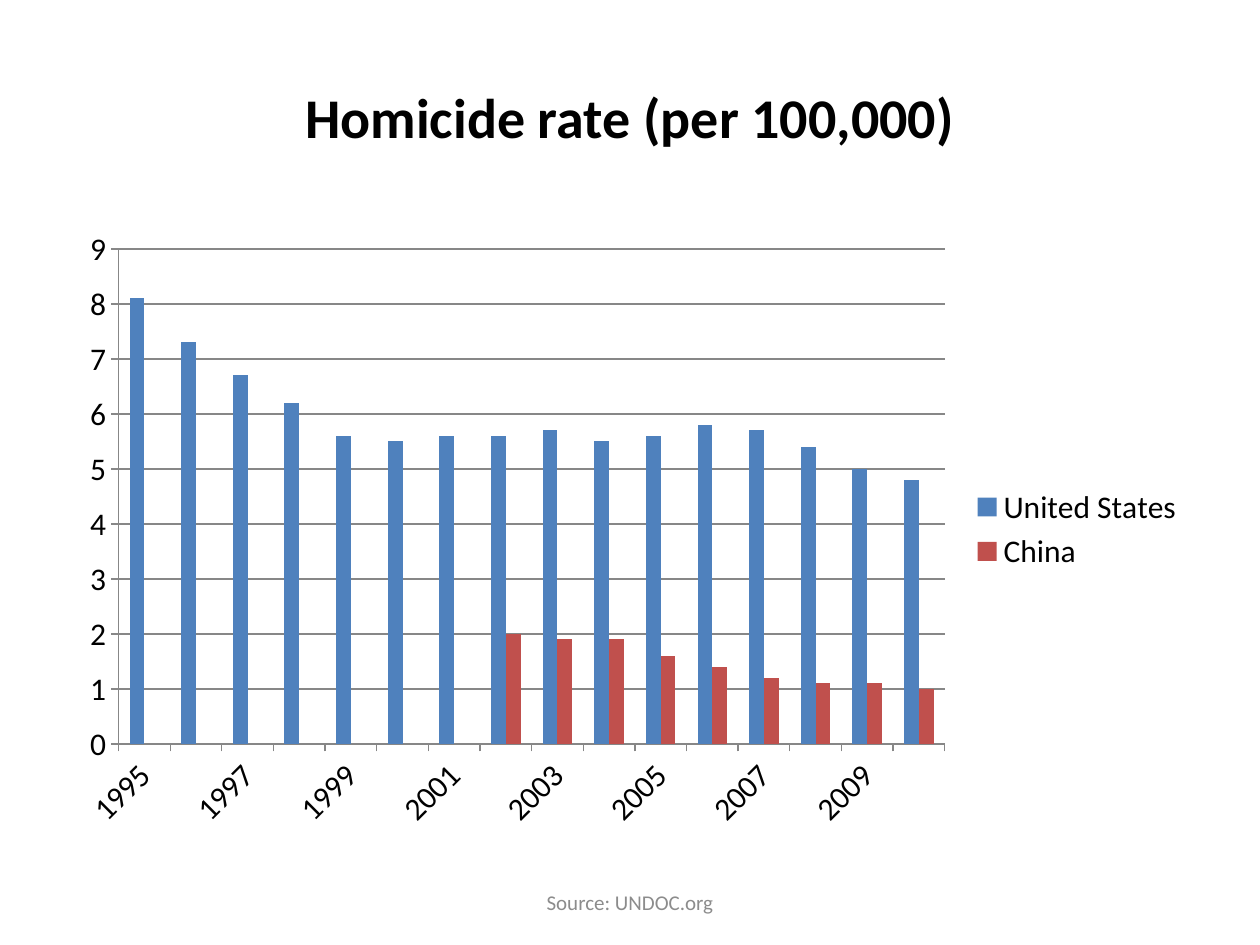
from dataclasses import dataclass

import pptx
import pptx.chart.data
import pptx.dml.color
import pptx.enum.chart
import pptx.enum.text
import pptx.util

WIDTH, HEIGHT = 10, 7.5
FONT = "Calibri"
AXIS_GREY = "878787"


@dataclass
class Box:
    """Position and size as shares of the slide's width and height."""
    left: float
    top: float
    width: float
    height: float

    def emu(self) -> list[int]:
        lengths = (self.left * WIDTH, self.top * HEIGHT,
                   self.width * WIDTH, self.height * HEIGHT)
        return [pptx.util.Inches(v) for v in lengths]


@dataclass
class Label:
    text: str
    box: Box
    size: int
    color: str
    bold: bool = False


@dataclass
class Series:
    name: str
    color: str
    values: list[float | None]


LABELS = [
    Label("Homicide rate (per 100,000)", Box(0.05, 0.04, 0.9, 1 / 6), 32, "000000", True),
    Label("Source: UNDOC.org", Box(0.34, 0.93, 0.32, 0.05), 12, "8C8C8C"),
]
CHART_BOX = Box(0.05, 0.23, 0.9, 0.66)
YEARS = [str(year) for year in range(1995, 2011)]
SERIES = [
    Series("United States", "4F81BD",
           [8.1, 7.3, 6.7, 6.2, 5.6, 5.5, 5.6, 5.6,
            5.7, 5.5, 5.6, 5.8, 5.7, 5.4, 5, 4.8]),
    Series("China", "C0504D",
           [None] * 7 + [2, 1.9, 1.9, 1.6, 1.4, 1.2, 1.1, 1.1, 1]),
]


def rgb(color: str) -> pptx.dml.color.RGBColor:
    return pptx.dml.color.RGBColor.from_string(color)


def set_all(target, **values) -> None:
    for name, value in values.items():
        setattr(target, name, value)


def set_font(font, size: int, color: str, bold: bool = False) -> None:
    set_all(font, name=FONT, size=pptx.util.Pt(size), bold=bold)
    font.color.rgb = rgb(color)


def set_line(line) -> None:
    line.color.rgb = rgb(AXIS_GREY)
    line.width = pptx.util.Pt(0.75)


def add_label(slide, label: Label) -> None:
    tf = slide.shapes.add_textbox(*label.box.emu()).text_frame
    set_all(tf, word_wrap=True, vertical_anchor=pptx.enum.text.MSO_ANCHOR.MIDDLE)
    p = tf.paragraphs[0]
    p.alignment = pptx.enum.text.PP_ALIGN.CENTER
    r = p.add_run()
    r.text = label.text
    set_font(r.font, label.size, label.color, label.bold)


def add_rate_chart(slide) -> None:
    data = pptx.chart.data.CategoryChartData()
    data.categories = YEARS
    for series in SERIES:
        data.add_series(series.name, series.values)
    kind = pptx.enum.chart.XL_CHART_TYPE.COLUMN_CLUSTERED
    chart = slide.shapes.add_chart(kind, *CHART_BOX.emu(), data).chart
    set_all(chart, has_title=False, has_legend=True)
    set_font(chart.font, 18, "000000")
    set_all(chart.legend, include_in_layout=False,
            position=pptx.enum.chart.XL_LEGEND_POSITION.RIGHT)

    plot = chart.plots[0]
    set_all(plot, gap_width=150, overlap=0, vary_by_categories=False)
    for drawn, series in zip(plot.series, SERIES):
        drawn.format.fill.solid()
        drawn.format.fill.fore_color.rgb = rgb(series.color)

    for axis in (chart.category_axis, chart.value_axis):
        set_all(axis, major_tick_mark=pptx.enum.chart.XL_TICK_MARK.OUTSIDE,
                minor_tick_mark=pptx.enum.chart.XL_TICK_MARK.NONE)
        set_line(axis.format.line)
    set_all(chart.value_axis, minimum_scale=0, maximum_scale=9, major_unit=1)
    set_line(chart.value_axis.major_gridlines.format.line)


def main() -> None:
    prs = pptx.Presentation()
    set_all(prs, slide_width=pptx.util.Inches(WIDTH),
            slide_height=pptx.util.Inches(HEIGHT))
    slide = prs.slides.add_slide(prs.slide_layouts[6])
    for label in LABELS:
        add_label(slide, label)
    add_rate_chart(slide)
    prs.save("out.pptx")


if __name__ == "__main__":
    main()
